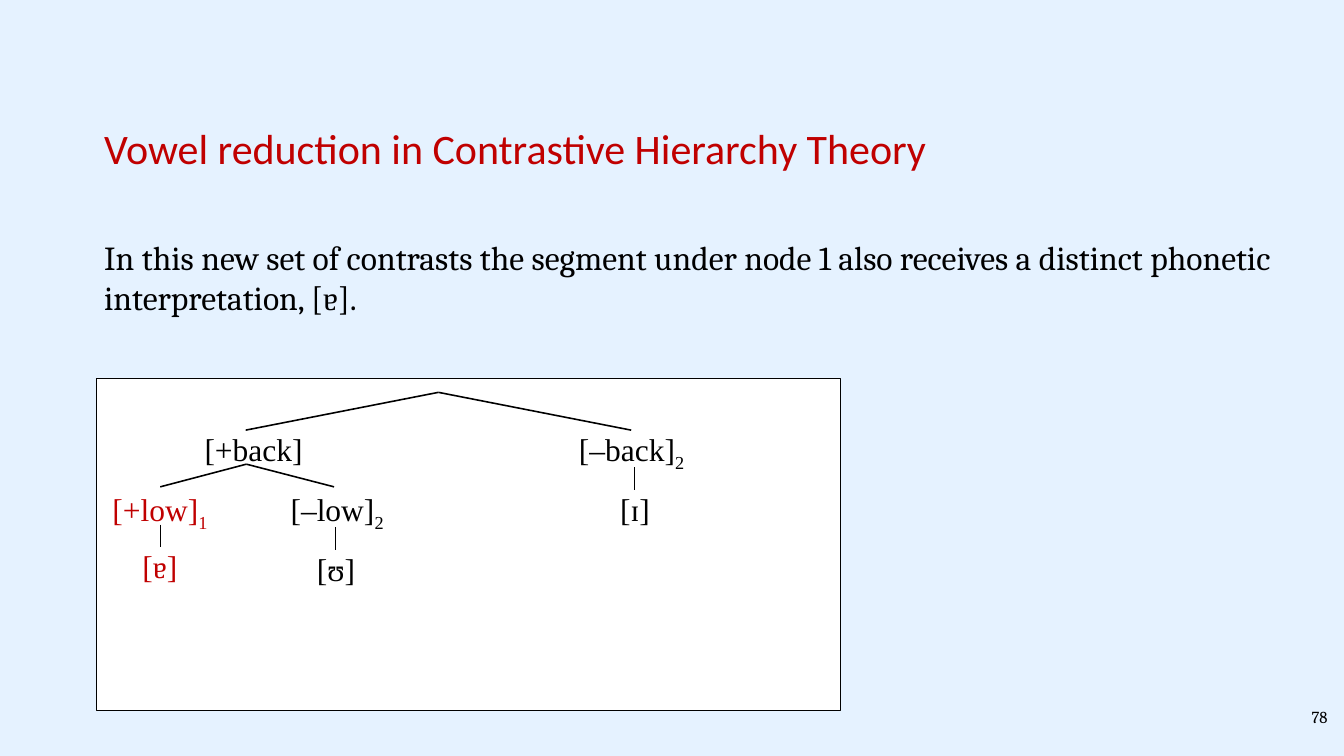
from lxml import etree
from pptx import Presentation
from pptx.dml.color import RGBColor
from pptx.enum.shapes import MSO_CONNECTOR, MSO_SHAPE
from pptx.enum.text import MSO_AUTO_SIZE, PP_ALIGN
from pptx.oxml.ns import qn
from pptx.util import Inches, Pt

STRAIGHT = MSO_CONNECTOR.STRAIGHT
RECTANGLE = MSO_SHAPE.RECTANGLE
FIT_SHAPE = MSO_AUTO_SIZE.SHAPE_TO_FIT_TEXT
LEFT, CENTER, RIGHT = PP_ALIGN.LEFT, PP_ALIGN.CENTER, PP_ALIGN.RIGHT

COLORS = {"sky": "E5F2FF", "panel": "FFFFFF", "ink": "000000", "accent": "C00000"}
SANS, SERIF, TREE = "Calibri", "Cambria", "Times New Roman"


def color(name):
    return RGBColor.from_string(COLORS[name])


def add_text(bounds, spans, size, ink="ink", align=LEFT, wrap=True):
    """Add a one-paragraph text box; spans are (text, font, baseline) tuples."""
    box = page.shapes.add_textbox(*[Inches(value) for value in bounds])
    box.text_frame.word_wrap = wrap
    box.text_frame.auto_size = FIT_SHAPE
    para = box.text_frame.paragraphs[0]
    para.alignment = align
    for text, font, baseline in spans:
        span = para.add_run()
        span.text = text
        span.font.name = font
        span.font.size = Pt(size)
        span.font.color.rgb = color(ink)
        if baseline:
            span.font._element.set("baseline", str(baseline * 1000))


deck = Presentation()
deck.slide_width, deck.slide_height = Inches(17.78), Inches(10)
page = deck.slides.add_slide(deck.slide_layouts[6])
page.background.fill.solid()
page.background.fill.fore_color.rgb = color("sky")

# Panel behind the tree
panel = page.shapes.add_shape(RECTANGLE, Inches(1.28), Inches(5), Inches(9.84), Inches(4.4))
panel.shadow.inherit = False
panel.fill.solid()
panel.fill.fore_color.rgb = color("panel")
panel.line.color.rgb = color("ink")
panel.line.width = Pt(0.75)

# Title, statement and page number
add_text((1.28, 1.57, 11.2, 0.77),
         [("Vowel reduction in Contrastive Hierarchy Theory", SANS, 0)],
         40, "accent", wrap=False)
add_text((1.28, 3.08, 15.75, 1.18),
         [("In this new set of contrasts the segment under node 1 also receives "
           "a distinct phonetic interpretation, [", SERIF, 0),
          ("ɐ", TREE, 0), ("].", SERIF, 0)], 32)
add_text((15.58, 9.3, 2.08, 0.5), [("78", SERIF, 0)], 16, align=RIGHT)

# Tree nodes: label, subscript, left, top, width, colour
nodes = [
    ("[+back]", "", 2.6, 5.64, 1.51, "ink"),
    ("[–back]", "2", 7.54, 5.64, 1.63, "ink"),
    ("[+low]", "1", 1.37, 6.43, 1.49, "accent"),
    ("[–low]", "2", 3.73, 6.43, 1.46, "ink"),
    ("[ɪ]", "", 8.1, 6.43, 0.6, "ink"),
    ("[ɐ]", "", 1.78, 7.18, 0.67, "accent"),
    ("[ʊ]", "", 4.09, 7.22, 0.71, "ink"),
]
for label, subscript, left, top, width, ink in nodes:
    spans = [(label, TREE, 0)]
    if subscript:
        spans.append((subscript, TREE, -25))
    add_text((left, top, width, 0.61), spans, 30, ink, CENTER, wrap=False)

# Tree branches and stems: start x, start y, end x, end y, line width
branches = [
    (5.8, 5.19, 3.25, 5.69, 1.5),
    (5.8, 5.19, 8.35, 5.69, 1.5),
    (3.26, 6.14, 2.12, 6.44, 1.5),
    (3.26, 6.14, 4.42, 6.44, 1.5),
    (2.12, 6.94, 2.12, 7.24, 0.75),
    (4.44, 6.97, 4.44, 7.27, 0.75),
    (8.4, 6.18, 8.4, 6.48, 1),
]
for *ends, weight in branches:
    branch = page.shapes.add_connector(STRAIGHT, *[Inches(value) for value in ends])
    branch.line.color.rgb = color("ink")
    branch.line.width = Pt(weight)
    etree.SubElement(branch._element.spPr, qn("a:effectLst"))

deck.save("out.pptx")
